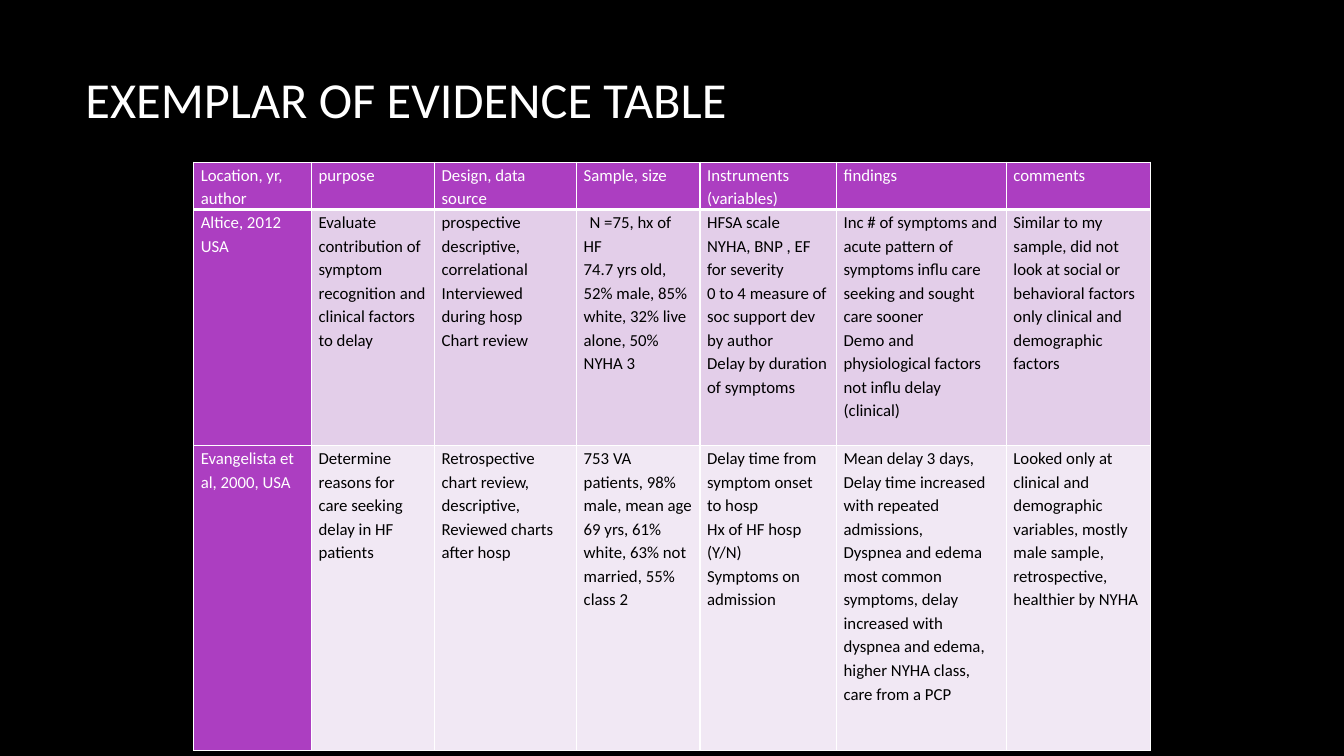
"""Build the slide with the exemplar of an evidence table."""
import pptx
import pptx.dml.color
import pptx.enum.text
import pptx.oxml
import pptx.oxml.ns
import pptx.util
from pptx.util import Cm, Pt

TITLE = "EXEMPLAR OF EVIDENCE TABLE"
EVIDENCE = [
    [
        ["Location, yr, author"],
        ["purpose"],
        ["Design, data source"],
        ["Sample, size"],
        ["Instruments", "(variables)"],
        ["findings"],
        ["comments"],
    ],
    [
        ["Altice, 2012", "USA"],
        ["Evaluate contribution of symptom recognition and clinical factors to delay"],
        ["prospective", "descriptive, correlational", "Interviewed during hosp", "Chart review"],
        ["N =75, hx of HF", "74.7 yrs old, 52% male, 85% white, 32% live alone, 50% NYHA 3"],
        [
            "HFSA scale",
            "NYHA, BNP , EF for severity",
            "0 to 4 measure of soc support dev by author",
            "Delay by duration of symptoms",
        ],
        [
            "Inc # of symptoms and acute pattern of symptoms influ care seeking and sought care sooner",
            "Demo and physiological factors not influ delay (clinical)",
        ],
        [
            "Similar to my sample, did not look at social or behavioral factors "
            "only clinical and demographic factors"
        ],
    ],
    [
        ["Evangelista et al, 2000, USA"],
        ["Determine reasons for care seeking delay in HF patients"],
        ["Retrospective chart review, descriptive,", "Reviewed charts after hosp"],
        ["753 VA patients, 98% male, mean age 69 yrs, 61% white, 63% not married, 55% class 2"],
        ["Delay time from symptom onset to hosp", "Hx of HF hosp (Y/N)", "Symptoms on admission"],
        [
            "Mean delay 3 days,",
            "Delay time increased with repeated admissions,",
            "Dyspnea and edema most common symptoms, delay increased with dyspnea "
            "and edema, higher NYHA class, care from a PCP",
        ],
        [
            "Looked only at clinical and demographic variables, mostly male sample, "
            "retrospective, healthier by NYHA"
        ],
    ],
]
FIRST_LINE_INDENTS = {"N =75, hx of HF": Cm(0.15)}

COLORS = {
    "background": "000000",
    "light": "FFFFFF",
    "dark": "000000",
    "heading": "AC3EC1",
    "odd_row": "E3CEE9",
    "even_row": "F1E8F4",
}
COLUMN_WIDTHS = [2.97, 3.1, 3.58, 3.11, 3.44, 4.28, 3.63]
ROW_HEIGHTS = [1.19, 5.95, 7.69]
TITLE_PLACE = {"left": Cm(1.9), "top": Cm(0.46), "width": Cm(28.14), "height": Cm(4.04)}
TITLE_FONT = {"name": "Calibri", "size": Pt(36), "bold": False}
CELL_FONT = {"name": "Calibri", "size": Pt(12), "bold": False}
CELL_MARGINS = {
    "margin_left": Cm(0.18),
    "margin_right": Cm(0.18),
    "margin_top": 0,
    "margin_bottom": 0,
}


def apply(target, values):
    for name, value in values.items():
        setattr(target, name, value)


def rgb(name):
    return pptx.dml.color.RGBColor.from_string(COLORS[name])


def add_border(cell, side, points):
    cell._tc.get_or_add_tcPr().append(pptx.oxml.parse_xml(
        f'<a:{side} {pptx.oxml.ns.nsdecls("a")} w="{Pt(points)}"><a:solidFill>'
        f'<a:srgbClr val="{COLORS["light"]}"/></a:solidFill></a:{side}>'
    ))


def fill_cell(cell, lines, row, column):
    heading = row == 0 or column == 0
    apply(cell, CELL_MARGINS)
    for side in ("lnL", "lnR", "lnT", "lnB"):
        add_border(cell, side, 3 if row == 0 and side == "lnB" else 1)
    cell.fill.solid()
    cell.fill.fore_color.rgb = rgb("heading" if heading else ("even_row", "odd_row")[row % 2])
    cell.text = "\n".join(lines)
    for paragraph in cell.text_frame.paragraphs:
        paragraph.line_spacing = 1.15
        if paragraph.text in FIRST_LINE_INDENTS:
            paragraph._p.get_or_add_pPr().set("indent", str(FIRST_LINE_INDENTS[paragraph.text]))
        for run in paragraph.runs:
            apply(run.font, CELL_FONT)
            run.font.color.rgb = rgb("light" if heading else "dark")


def main():
    deck = pptx.Presentation()
    apply(deck, {"slide_width": Cm(33.87), "slide_height": Cm(19.05)})
    slide = deck.slides.add_slide(deck.slide_layouts[5])
    slide.background.fill.solid()
    slide.background.fill.fore_color.rgb = rgb("background")

    title = slide.shapes.title
    apply(title, TITLE_PLACE)
    title.text_frame.text = TITLE
    title.text_frame.vertical_anchor = pptx.enum.text.MSO_ANCHOR.MIDDLE
    heading = title.text_frame.paragraphs[0]
    heading.alignment = pptx.enum.text.PP_ALIGN.LEFT
    apply(heading.runs[0].font, TITLE_FONT)
    heading.runs[0].font.color.rgb = rgb("light")

    evidence = slide.shapes.add_table(
        len(EVIDENCE), len(COLUMN_WIDTHS), Cm(4.88), Cm(4.09),
        Cm(sum(COLUMN_WIDTHS)), Cm(sum(ROW_HEIGHTS)),
    ).table
    for column, width in zip(evidence.columns, COLUMN_WIDTHS):
        column.width = Cm(width)
    for row, height in zip(evidence.rows, ROW_HEIGHTS):
        row.height = Cm(height)
    for row, entries in enumerate(EVIDENCE):
        for column, lines in enumerate(entries):
            fill_cell(evidence.cell(row, column), lines, row, column)

    deck.save("out.pptx")


if __name__ == "__main__":
    main()
